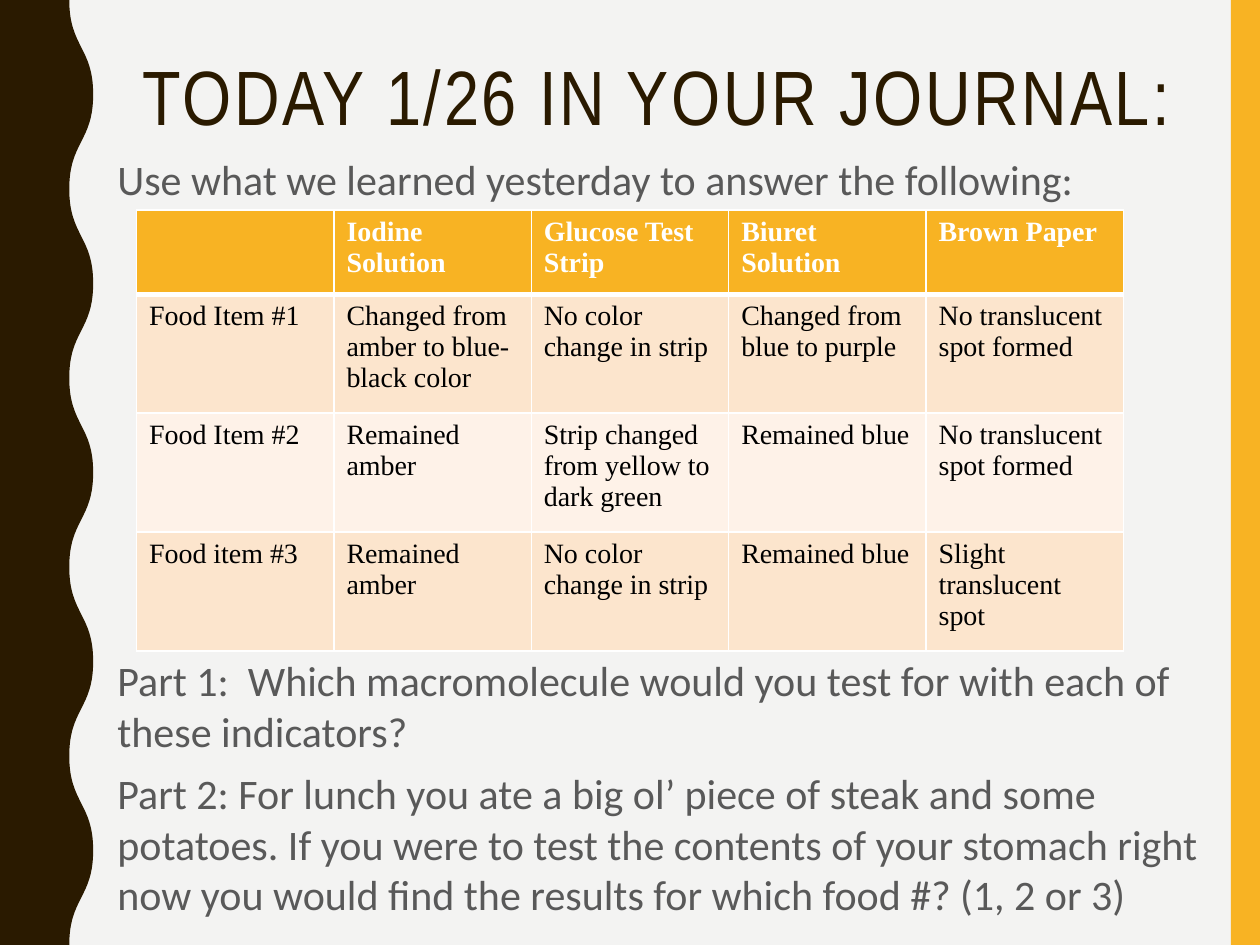
import pptx
import pptx.dml.color
import pptx.enum.shapes
import pptx.enum.text
import pptx.oxml
import pptx.oxml.ns
import pptx.util

COLORS = {
    "background": "F3F3F2",
    "gold": "F8B323",
    "brown": "2A1A00",
    "gray": "595959",
    "white": "FFFFFF",
    "black": "000000",
    "band_dark": "FCE5CD",
    "band_light": "FEF2E8",
}

presentation = pptx.Presentation()
presentation.slide_width = pptx.util.Inches(10)
presentation.slide_height = pptx.util.Inches(7.5)
width = presentation.slide_width
height = presentation.slide_height
slide = presentation.slides.add_slide(presentation.slide_layouts[5])


def paint(fill, color):
    fill.solid()
    fill.fore_color.rgb = pptx.dml.color.RGBColor.from_string(COLORS[color])


def write(paragraph, text, font, size, color, bold=False, before=0, line=1.0, tracking=0):
    paragraph.alignment = pptx.enum.text.PP_ALIGN.LEFT
    paragraph.space_before = pptx.util.Pt(before)
    paragraph.line_spacing = line
    run = paragraph.add_run()
    run.text = text
    run.font.name = font
    run.font.size = pptx.util.Pt(size)
    run.font.bold = bold
    paint(run.font.fill, color)
    if tracking:
        run.font._element.set("spc", str(int(tracking * 100)))


paint(slide.background.fill, "background")

stripe_width = int(width * 0.023)
stripe = slide.shapes.add_shape(
    pptx.enum.shapes.MSO_SHAPE.RECTANGLE, width - stripe_width, 0, stripe_width, height
)
stripe.shadow.inherit = False
paint(stripe.fill, "gold")
stripe.line.fill.background()

trough, crest = int(width * 0.055), int(width * 0.074)
half_waves = 10
half_wave_height = height // half_waves
edge = [(crest if index % 2 else trough, index * half_wave_height) for index in range(half_waves + 1)]
builder = slide.shapes.build_freeform(*edge[0])
builder.add_line_segments(edge[1:] + [(0, height), (0, 0)], close=True)
wave = builder.convert_to_shape()
wave.shadow.inherit = False
paint(wave.fill, "brown")
wave.line.fill.background()
segments = wave._element.findall(".//" + pptx.oxml.ns.qn("a:lnTo"))
for segment, (start_x, start_y), (end_x, end_y) in zip(segments, edge, edge[1:]):
    middle_y = (start_y + end_y) // 2
    points = "".join(
        f'<a:pt x="{x}" y="{y}"/>'
        for x, y in [(start_x, middle_y), (end_x, middle_y), (end_x, end_y)]
    )
    curve = pptx.oxml.parse_xml(
        f'<a:cubicBezTo {pptx.oxml.ns.nsdecls("a")}>{points}</a:cubicBezTo>'
    )
    segment.getparent().replace(segment, curve)

title = slide.shapes.title
title._element.getparent().append(title._element)
title.left, title.top = int(width * 0.103), int(height * 0.056)
title.width, title.height = int(width * 0.847), int(height * 0.123)
title.text_frame.word_wrap = True
title.text_frame.vertical_anchor = pptx.enum.text.MSO_ANCHOR.MIDDLE
title.text_frame.margin_bottom = pptx.util.Inches(0.22)
write(title.text_frame.paragraphs[0], "TODAY 1/26 IN YOUR JOURNAL:",
      font="Arial Narrow", size=44, color="brown", line=0.9, tracking=1.5)

questions = [
    ("Use what we learned yesterday to answer the following:", 0),
    ("Part 1:  Which macromolecule would you test for with each of these indicators?", 257.5),
    ("Part 2: For lunch you ate a big ol’ piece of steak and some potatoes. "
     "If you were to test the contents of your stomach right now you would find "
     "the results for which food #? (1, 2 or 3)", 7),
]
body = slide.shapes.add_textbox(
    int(width / 12), int(height * 0.156), int(width * 0.893), int(height * 0.844)
)
body.text_frame.word_wrap = True
for index, (question, before) in enumerate(questions):
    paragraph = body.text_frame.paragraphs[0] if index == 0 else body.text_frame.add_paragraph()
    write(paragraph, question, font="Calibri", size=24, color="gray", before=before)

results = [
    ["", "Iodine Solution", "Glucose Test Strip", "Biuret Solution", "Brown Paper"],
    ["Food Item #1", "Changed from amber to blue-black color", "No color change in strip",
     "Changed from blue to purple", "No translucent spot formed"],
    ["Food Item #2", "Remained amber", "Strip changed from yellow to dark green",
     "Remained blue", "No translucent spot formed"],
    ["Food item #3", "Remained amber", "No color change in strip",
     "Remained blue", "Slight translucent spot"],
]
row_fills = ["gold", "band_dark", "band_light", "band_dark"]
table_width, table_height = int(width * 47 / 60), pptx.util.Inches(3.5)
header_height = pptx.util.Inches(0.67)
table = slide.shapes.add_table(
    len(results), len(results[0]), int(width * 13 / 120), int(height * 2 / 9), table_width, table_height
).table
table.horz_banding = False
for row_index, row in enumerate(results):
    header = row_index == 0
    table.rows[row_index].height = (
        header_height if header else (table_height - header_height) // (len(results) - 1)
    )
    for column_index, text in enumerate(row):
        cell = table.cell(row_index, column_index)
        properties = cell._tc.get_or_add_tcPr()
        for side in "LRTB":
            thick = (header and side == "B") or (row_index == 1 and side == "T")
            properties.append(pptx.oxml.parse_xml(
                f'<a:ln{side} {pptx.oxml.ns.nsdecls("a")} w="{pptx.util.Pt(3 if thick else 1)}">'
                f'<a:solidFill><a:srgbClr val="{COLORS["white"]}"/></a:solidFill></a:ln{side}>'
            ))
        paint(cell.fill, row_fills[row_index])
        if text:
            write(cell.text_frame.paragraphs[0], text, font="Times New Roman", size=16,
                  color="white" if header else "black", bold=header)

presentation.save("out.pptx")
